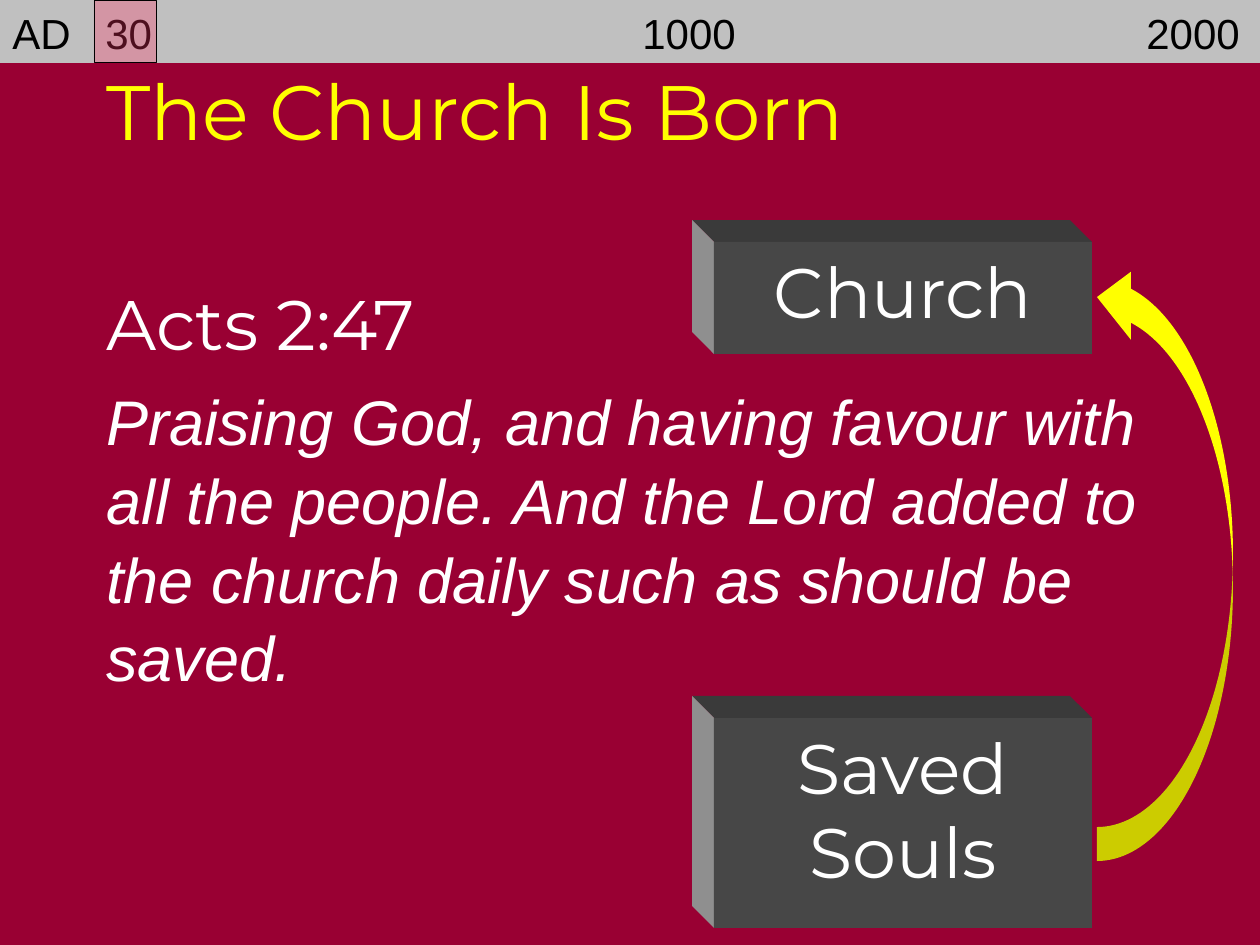
from lxml import etree
from pptx import Presentation
from pptx.dml.color import RGBColor
from pptx.enum.shapes import MSO_SHAPE
from pptx.enum.text import MSO_ANCHOR, PP_ALIGN
from pptx.oxml.ns import qn
from pptx.util import Pt

RECT, ARROW = MSO_SHAPE.RECTANGLE, MSO_SHAPE.CURVED_UP_ARROW
TOP, MIDDLE = MSO_ANCHOR.TOP, MSO_ANCHOR.MIDDLE
LEFT, CENTER = PP_ALIGN.LEFT, PP_ALIGN.CENTER
SCALE = 914400 / 126  # EMU in one px
HEAD, BODY = "Montserrat", "Arial"
COLORS = {
    "back": "990033", "white": "FFFFFF", "black": "000000",
    "yellow": "FFFF00", "strip": "C0C0C0", "mark": "FF3366",
    "front": "474747", "top": "3A3A3A", "side": "8F8F8F",
}


def px(n):
    return round(n * SCALE)


def color(name):
    return RGBColor.from_string(COLORS[name])


def paint(shape, fill):
    shape.shadow.inherit = False
    shape.fill.solid()
    shape.fill.fore_color.rgb = color(fill)
    shape.line.fill.background()
    return shape


def add_box(slide, kind, box, fill):
    return paint(slide.shapes.add_shape(kind, *map(px, box)), fill)


def add_face(slide, points, fill):
    start, *rest = points
    form = slide.shapes.build_freeform(*start, scale=SCALE)
    form.add_line_segments(rest, close=True)
    return paint(form.convert_to_shape(), fill)


def set_frame(shape, anchor):
    frame = shape.text_frame
    frame.word_wrap = True
    frame.vertical_anchor = anchor
    return frame


def add_run(para, text, size, font, ink, italic=False, shade=False):
    run = para.add_run()
    run.text = text
    run.font.size = Pt(size)
    run.font.italic = italic
    run.font.color.rgb = color(ink)
    if shade:
        effects = etree.SubElement(run.font._element, qn("a:effectLst"))
        drop = etree.SubElement(effects, qn("a:outerShdw"),
                                dist="35921", dir="2700000", algn="ctr")
        etree.SubElement(drop, qn("a:srgbClr"), val=COLORS["black"])
    run.font.name = font


def add_title(slide, box):
    frame = set_frame(slide.shapes.add_textbox(*map(px, box)), MIDDLE)
    add_run(frame.paragraphs[0], "The Church Is Born", 44, HEAD, "yellow",
            shade=True)


def add_verse(slide, box):
    frame = set_frame(slide.shapes.add_textbox(*map(px, box)), TOP)
    add_run(frame.paragraphs[0], "Acts 2:47", 40, HEAD, "white", shade=True)
    para = frame.add_paragraph()
    para.space_before = Pt(9)
    para.line_spacing = 1.04
    add_run(para, "Praising God, and having favour with all the people. "
            "And the Lord added to the church daily such as should be saved.",
            36, BODY, "white", italic=True, shade=True)


def add_block(slide, box, text, depth=22):
    x, y, w, h = box
    # Top and left faces recede up and to the left
    back = (x - depth, y - depth)
    add_face(slide, [(x, y), back, (x + w - depth, y - depth), (x + w, y)],
             "top")
    add_face(slide, [(x, y), back, (x - depth, y + h - depth), (x, y + h)],
             "side")
    frame = set_frame(add_box(slide, RECT, box, "front"), TOP)
    para = frame.paragraphs[0]
    para.alignment = CENTER
    add_run(para, text, 40, HEAD, "white")


def add_strip(slide, box):
    x, y, w, h = box
    frame = set_frame(add_box(slide, RECT, box, "strip"), MIDDLE)
    para = frame.paragraphs[0]
    para.alignment = LEFT
    para.line_spacing = 1.04
    tabs = etree.SubElement(para._p.get_or_add_pPr(), qn("a:tabLst"))
    for stop in (93, 630, 1134):
        etree.SubElement(tabs, qn("a:tab"), pos=str(px(stop)), algn="l")
    add_run(para, "AD\t30\t1000\t2000", 24, BODY, "black")
    # Clear marker over the year 30
    mark = add_box(slide, RECT, (x + 94, y, 63, h), "mark")
    mark.line.color.rgb = color("black")
    mark.line.width = Pt(0.5)
    tint = mark.fill._xPr.find(qn("a:solidFill"))[0]
    etree.SubElement(tint, qn("a:alpha"), val="30000")


def add_arrow(slide, box):
    # The box is the upright one, before the quarter turn
    x, y, w, h = box
    shift = (h - w) / 2
    turned = (x - shift, y + shift, h, w)
    add_box(slide, ARROW, turned, "yellow").rotation = 270


def main():
    deck = Presentation()
    deck.slide_width, deck.slide_height = px(1260), px(945)
    slide = deck.slides.add_slide(deck.slide_layouts[6])
    slide.background.fill.solid()
    slide.background.fill.fore_color.rgb = color("back")

    add_verse(slide, (94, 274, 1071, 451))
    add_block(slide, (714, 242, 378, 112), "Church")
    add_block(slide, (714, 718, 378, 210), "Saved Souls")
    add_title(slide, (94, 57, 1071, 106))
    add_strip(slide, (0, 0, 1260, 63))
    add_arrow(slide, (1097, 263, 136, 598))
    deck.save("out.pptx")


if __name__ == "__main__":
    main()
